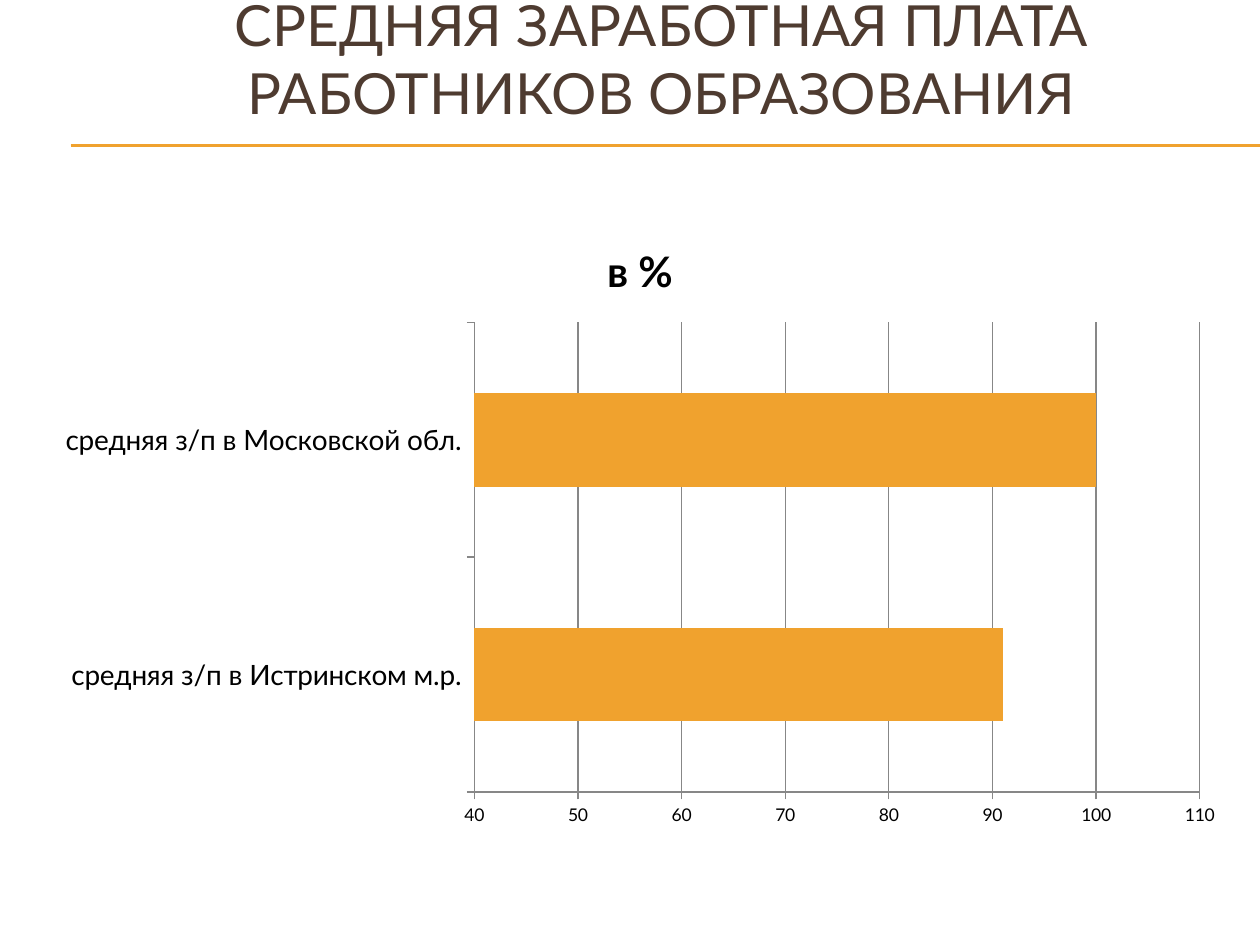
from lxml import etree
from pptx import Presentation
from pptx.chart import data as cd
from pptx.dml.color import RGBColor
from pptx.enum import chart as ch, shapes, text
from pptx.oxml import ns
from pptx.util import Inches, Pt

FONT = "Lato"
BROWN = RGBColor(0x4E, 0x3B, 0x30)
GOLD = RGBColor(0xF0, 0xA2, 0x2E)
GREY = RGBColor(0x87, 0x87, 0x87)
BLACK = RGBColor(0, 0, 0)

HEAD = "СРЕДНЯЯ ЗАРАБОТНАЯ ПЛАТА РАБОТНИКОВ ОБРАЗОВАНИЯ"
UNIT = "в %"
WAGES = [
    ("средняя з/п в Истринском м.р.", 91),
    ("средняя з/п в Московской обл.", 100),
]
RULES = [1.15, 1.16]


def style(font, size, color, bold=False):
    font.name = FONT
    font.size = Pt(size)
    font.bold = bold
    font.color.rgb = color


def add_rule(slide, top):
    rule = slide.shapes.add_connector(
        shapes.MSO_CONNECTOR.STRAIGHT,
        Inches(0.56), Inches(top), Inches(10), Inches(top))
    rule.line.color.rgb = GOLD
    rule.line.width = Pt(0.75)
    props = rule._element.spPr
    etree.SubElement(props, ns.qn("a:effectLst"))


def set_title(slide):
    title = slide.shapes.title
    title.left, title.top = Inches(0.5), Inches(0)
    title.width, title.height = Inches(9.5), Inches(0.92)
    frame = title.text_frame
    frame.word_wrap = True
    frame.auto_size = text.MSO_AUTO_SIZE.NONE
    frame.vertical_anchor = text.MSO_ANCHOR.MIDDLE
    para = frame.paragraphs[0]
    para.alignment = text.PP_ALIGN.CENTER
    run = para.add_run()
    run.text = HEAD
    style(run.font, 32.4, BROWN)


def add_bars(slide):
    data = cd.CategoryChartData()
    data.categories = [name for name, _ in WAGES]
    data.add_series(UNIT, [value for _, value in WAGES])
    chart = slide.shapes.add_chart(
        ch.XL_CHART_TYPE.BAR_CLUSTERED,
        Inches(0.33), Inches(1.7), Inches(9.5), Inches(4.95), data).chart
    style(chart.font, 10, BLACK)
    chart.has_legend = False
    chart.has_title = True
    run = chart.chart_title.text_frame.paragraphs[0].add_run()
    run.text = UNIT
    style(run.font, 24, BLACK, True)

    plot = chart.plots[0]
    plot.gap_width = 150
    plot.vary_by_categories = False
    fill = plot.series[0].format.fill
    fill.solid()
    fill.fore_color.rgb = GOLD

    for axis, size in [(chart.category_axis, 16), (chart.value_axis, 10)]:
        style(axis.tick_labels.font, size, BLACK)
        axis.major_tick_mark = ch.XL_TICK_MARK.OUTSIDE
        axis.minor_tick_mark = ch.XL_TICK_MARK.NONE
        axis.format.line.color.rgb = GREY
        axis.format.line.width = Pt(0.75)
    chart.category_axis.has_major_gridlines = False
    scale = chart.value_axis
    scale.minimum_scale, scale.maximum_scale = 40, 110
    scale.major_unit = 10
    scale.has_major_gridlines = True
    scale.major_gridlines.format.line.color.rgb = GREY
    scale.major_gridlines.format.line.width = Pt(0.75)


def main():
    deck = Presentation()
    deck.slide_width, deck.slide_height = Inches(10), Inches(7.5)
    slide = deck.slides.add_slide(deck.slide_layouts[5])
    for top in RULES:
        add_rule(slide, top)
    set_title(slide)
    add_bars(slide)
    deck.save("out.pptx")


if __name__ == "__main__":
    main()
